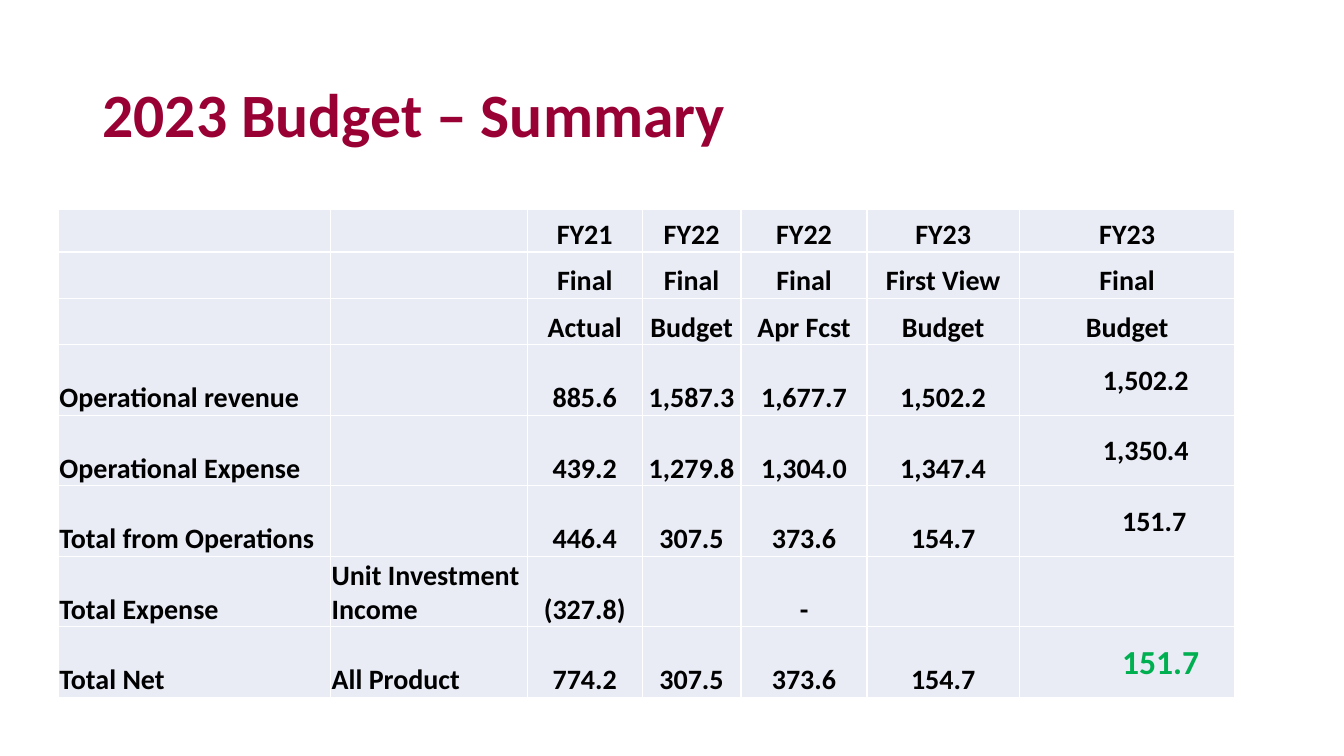
from lxml.etree import SubElement
from pptx import Presentation
from pptx.dml.color import RGBColor
from pptx.enum.text import MSO_ANCHOR as Anchor, PP_ALIGN as Align
from pptx.oxml.ns import qn
from pptx.util import Inches, Pt

COLOURS = {"title": "990033", "text": "000000", "net": "00B050",
           "cell": "E9EBF5", "grid": "FFFFFF"}
COLUMN_WIDTHS = [2.7, 1.95, 1.14, 0.98, 1.25, 1.51, 2.14]
HEADER_HEIGHTS = [0.42, 0.46, 0.46]
BODY_HEIGHT = 0.7
BUDGET = [
    ["", "", "FY21", "FY22", "FY22", "FY23", "FY23"],
    ["", "", "Final", "Final", "Final", "First View", "Final"],
    ["", "", "Actual", "Budget", "Apr Fcst", "Budget", "Budget"],
    ["Operational revenue", "", "885.6", "1,587.3", "1,677.7", "1,502.2", "1,502.2"],
    ["Operational Expense", "", "439.2", "1,279.8", "1,304.0", "1,347.4", "1,350.4"],
    ["Total from Operations", "", "446.4", "307.5", "373.6", "154.7", "151.7"],
    ["Total Expense", "Unit Investment Income", "(327.8)", "", "-", "", ""],
    ["Total Net", "All Product", "774.2", "307.5", "373.6", "154.7", "151.7"],
]
CELL_FORMAT = {"margin_left": Inches(0.01), "margin_right": Inches(0.01),
               "margin_top": Inches(0.01), "margin_bottom": 0}


def rgb(name):
    return RGBColor.from_string(COLOURS[name])


def style_font(font, size, colour):
    for attribute, value in {"name": "Calibri", "size": Pt(size), "bold": True}.items():
        setattr(font, attribute, value)
    font.color.rgb = rgb(colour)


def add_title(slide, text):
    title = slide.shapes.add_textbox(Inches(0.92), Inches(0.75), Inches(11.5), Inches(0.83))
    frame = title.text_frame
    frame.word_wrap = True
    frame.vertical_anchor = Anchor.MIDDLE
    heading = frame.paragraphs[0]
    heading.text = text
    heading.line_spacing = 0.9
    style_font(heading.font, 44, "title")


def draw_grid(cell):
    """Give the cell a thin line on all four sides."""
    properties = cell._tc.get_or_add_tcPr()
    for position, side in enumerate(("a:lnL", "a:lnR", "a:lnT", "a:lnB")):
        line = SubElement(properties, qn(side), w=str(Pt(1)))
        fill = SubElement(line, qn("a:solidFill"))
        SubElement(fill, qn("a:srgbClr"), val=COLOURS["grid"])
        properties.insert(position, line)


def fill_cell(cell, row, column):
    final_figure = row >= len(HEADER_HEIGHTS) and column == len(COLUMN_WIDTHS) - 1
    for attribute, value in CELL_FORMAT.items():
        setattr(cell, attribute, value)
    cell.vertical_anchor = Anchor.MIDDLE if final_figure else Anchor.BOTTOM
    cell.fill.solid()
    cell.fill.fore_color.rgb = rgb("cell")
    draw_grid(cell)

    entry = cell.text_frame.paragraphs[0]
    entry.text = BUDGET[row][column]
    entry.alignment = Align.LEFT if column < 2 or final_figure else Align.CENTER
    net = final_figure and row == len(BUDGET) - 1
    style_font(entry.font, 24 if net else 20, "net" if net else "text")
    if final_figure:
        indent = 0.82 if "," in BUDGET[row][column] else 1.01
        entry._p.get_or_add_pPr().set("marL", str(Inches(indent)))


def add_budget_table(slide):
    heights = HEADER_HEIGHTS + [BODY_HEIGHT] * (len(BUDGET) - len(HEADER_HEIGHTS))
    table = slide.shapes.add_table(
        len(heights), len(COLUMN_WIDTHS), Inches(0.58), Inches(2.08),
        Inches(sum(COLUMN_WIDTHS)), Inches(sum(heights))).table
    for column, width in zip(table.columns, COLUMN_WIDTHS):
        column.width = Inches(width)
    for row, height in enumerate(heights):
        table.rows[row].height = Inches(height)
        for column in range(len(COLUMN_WIDTHS)):
            fill_cell(table.cell(row, column), row, column)


def main():
    deck = Presentation()
    deck.slide_width, deck.slide_height = Inches(13.33), Inches(7.5)
    slide = deck.slides.add_slide(deck.slide_layouts[6])
    add_title(slide, "2023 Budget – Summary")
    add_budget_table(slide)
    deck.save("out.pptx")


if __name__ == "__main__":
    main()
